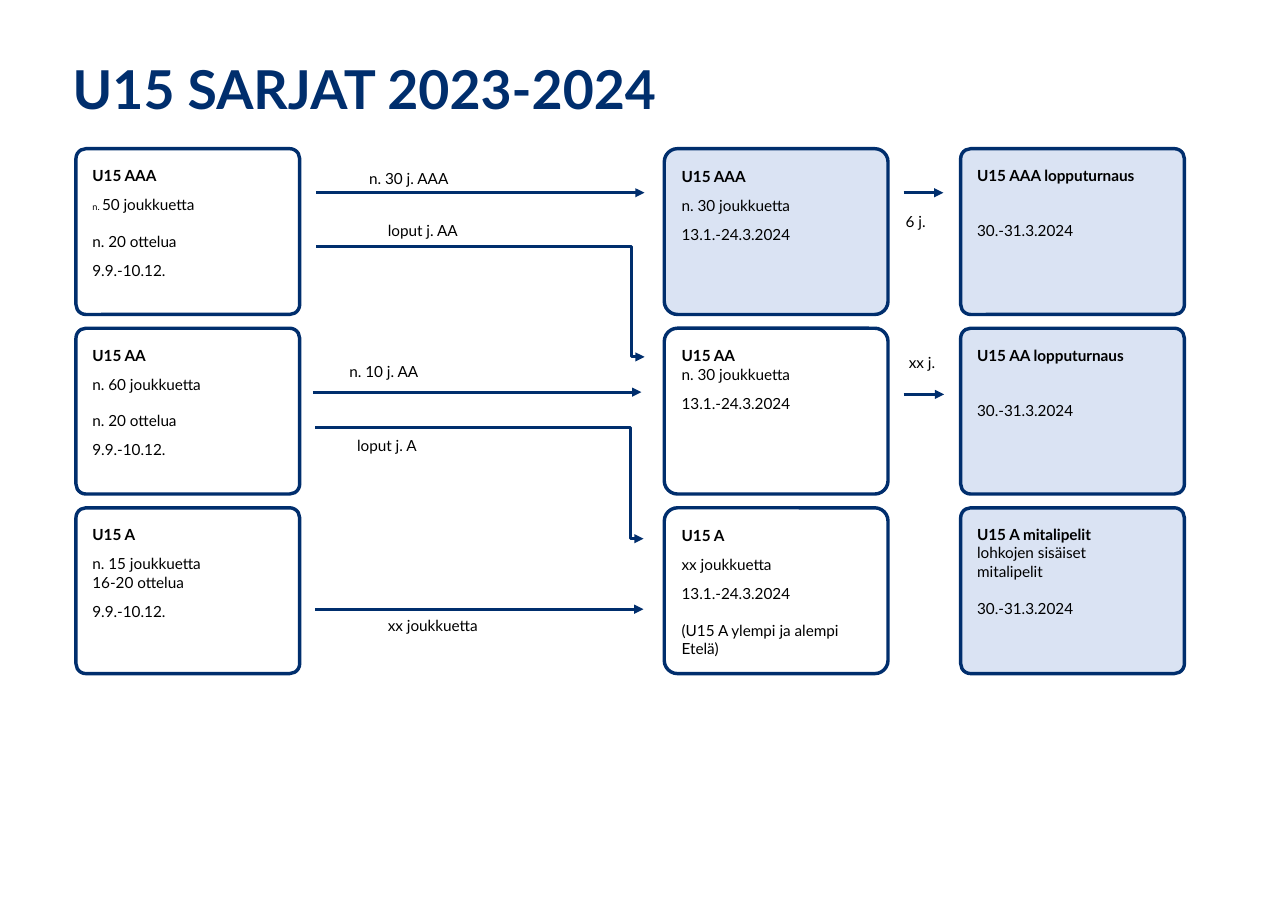
from dataclasses import dataclass

from lxml import etree
from pptx import Presentation
from pptx import util as u
from pptx.dml.color import RGBColor
from pptx.enum import shapes, text
from pptx.oxml import ns


@dataclass(frozen=True)
class Theme:
    navy: RGBColor = RGBColor(0x00, 0x2E, 0x6D)
    pale: RGBColor = RGBColor(0xDA, 0xE3, 0xF3)
    ink: RGBColor = RGBColor(0, 0, 0)
    font: str = "Lato"
    title: int = 35
    body: int = 10
    small: int = 6
    border: float = 2.25
    arrow: float = 2


THEME = Theme()
WIDTH, HEIGHT = u.Inches(11.69), u.Inches(8.27)
COLUMNS = (5.9, 51.58, 74.59)
FIRST_ROW, ROW_STEP = 16.32, 19.71
CARD_WIDTH, CARD_HEIGHT = 17.37, 18.2
CORNERS = (0.06, 0.08, 0.06)
TIGHT, NARROW, LINE, DOUBLE = 0, 7, 12, 24

CARDS = [
    (0, 0, False, "U15 AAA", [(NARROW, "n. ", "50 joukkuetta"), (LINE, "", "n. 20 ottelua"),
                              (NARROW, "", "9.9.-10.12.")]),
    (0, 1, False, "U15 AA", [(NARROW, "", "n. 60 joukkuetta"), (LINE, "", "n. 20 ottelua"),
                             (NARROW, "", "9.9.-10.12.")]),
    (0, 2, False, "U15 A", [(NARROW, "", "n. 15 joukkuetta"), (TIGHT, "", "16-20 ottelua"),
                            (NARROW, "", "9.9.-10.12.")]),
    (1, 0, True, "U15 AAA", [(NARROW, "", "n. 30 joukkuetta"), (NARROW, "", "13.1.-24.3.2024")]),
    (1, 1, False, "U15 AA", [(TIGHT, "", "n. 30 joukkuetta"), (NARROW, "", "13.1.-24.3.2024")]),
    (1, 2, False, "U15 A", [(NARROW, "", "xx joukkuetta"), (NARROW, "", "13.1.-24.3.2024"),
                            (LINE, "", "(U15 A ylempi ja alempi Etelä)")]),
    (2, 0, True, "U15 AAA lopputurnaus", [(DOUBLE, "", "30.-31.3.2024")]),
    (2, 1, True, "U15 AA lopputurnaus", [(DOUBLE, "", "30.-31.3.2024")]),
    (2, 2, True, "U15 A mitalipelit", [(TIGHT, "", "lohkojen sisäiset mitalipelit"),
                                       (LINE, "", "30.-31.3.2024")]),
]

ARROWS = [
    (24.55, 21.16, 50.04, 21.16),
    (24.55, 27.09, 50.04, 39.18),
    (24.3, 43.05, 49.8, 43.05),
    (24.47, 46.92, 49.96, 59.13),
    (24.47, 66.87, 49.96, 66.87),
    (70.15, 21.16, 73.25, 21.16),
    (70.15, 43.29, 73.3, 43.29),
]

LABELS = [
    (28.66, 18.62, 12, "n. 30 j. AAA"),
    (30.11, 24.3, 12, "loput j. AA"),
    (27.12, 39.78, 12, "n. 10 j. AA"),
    (27.72, 47.88, 12, "loput j. A"),
    (30.11, 67.59, 12, "xx joukkuetta"),
    (70.32, 23.34, 4, "6 j."),
    (70.57, 38.81, 4, "xx j."),
]


def across(percent):
    return round(WIDTH * percent / 100)


def down(percent):
    return round(HEIGHT * percent / 100)


def style(para, size, color, bold=False):
    para.alignment = text.PP_ALIGN.LEFT
    para.font.name = THEME.font
    para.font.size = u.Pt(size)
    para.font.bold = bold
    para.font.color.rgb = color


def set_frame(frame, left=0, top=0, right=0):
    frame.word_wrap = True
    frame.vertical_anchor = text.MSO_ANCHOR.TOP
    frame.margin_left, frame.margin_top = across(left), down(top)
    frame.margin_right, frame.margin_bottom = across(right), 0


def add_label(page, left, top, width, height, words, size, color, bold=False):
    box = page.shapes.add_textbox(across(left), down(top), across(width), down(height))
    set_frame(box.text_frame)
    para = box.text_frame.paragraphs[0]
    para.text = words
    style(para, size, color, bold)


def add_card(page, column, row, shaded, heading, lines):
    card = page.shapes.add_shape(
        shapes.MSO_SHAPE.ROUNDED_RECTANGLE, across(COLUMNS[column]),
        down(FIRST_ROW + ROW_STEP * row), across(CARD_WIDTH), down(CARD_HEIGHT))
    card.adjustments[0] = CORNERS[column]
    card.shadow.inherit = False
    card.line.color.rgb = THEME.navy
    card.line.width = u.Pt(THEME.border)
    if shaded:
        card.fill.solid()
        card.fill.fore_color.rgb = THEME.pale
    else:
        card.fill.background()
    frame = card.text_frame
    set_frame(frame, left=1.05, top=1.6, right=2.75)
    frame.paragraphs[0].text = heading
    style(frame.paragraphs[0], THEME.body, THEME.ink, bold=True)
    for gap, prefix, words in lines:
        para = frame.add_paragraph()
        para.space_before = u.Pt(gap)
        style(para, THEME.body, THEME.ink)
        if prefix:
            span = para.add_run()
            span.text = prefix
            span.font.size = u.Pt(THEME.small)
        para.add_run().text = words


def add_arrow(page, left, top, right, bottom):
    bent = top != bottom
    kind = shapes.MSO_CONNECTOR.ELBOW if bent else shapes.MSO_CONNECTOR.STRAIGHT
    arrow = page.shapes.add_connector(kind, across(left), down(top), across(right), down(bottom))
    arrow.line.color.rgb = THEME.navy
    arrow.line.width = u.Pt(THEME.arrow)
    properties = arrow.element.spPr
    etree.SubElement(properties.find(ns.qn("a:ln")), ns.qn("a:tailEnd"), type="triangle")
    etree.SubElement(properties, ns.qn("a:effectLst"))
    if bent:
        guides = properties.find(ns.qn("a:prstGeom")).find(ns.qn("a:avLst"))
        etree.SubElement(guides, ns.qn("a:gd"), name="adj1", fmla="val 96100")


def main():
    deck = Presentation()
    deck.slide_width, deck.slide_height = WIDTH, HEIGHT
    page = deck.slides.add_slide(deck.slide_layouts[6])
    add_label(page, 5.65, 6.17, 80, 7, "U15 SARJAT 2023-2024", THEME.title, THEME.navy, bold=True)
    for card in CARDS:
        add_card(page, *card)
    for arrow in ARROWS:
        add_arrow(page, *arrow)
    for left, top, width, words in LABELS:
        add_label(page, left, top, width, 2.4, words, THEME.body, THEME.ink)
    deck.save("out.pptx")


if __name__ == "__main__":
    main()
